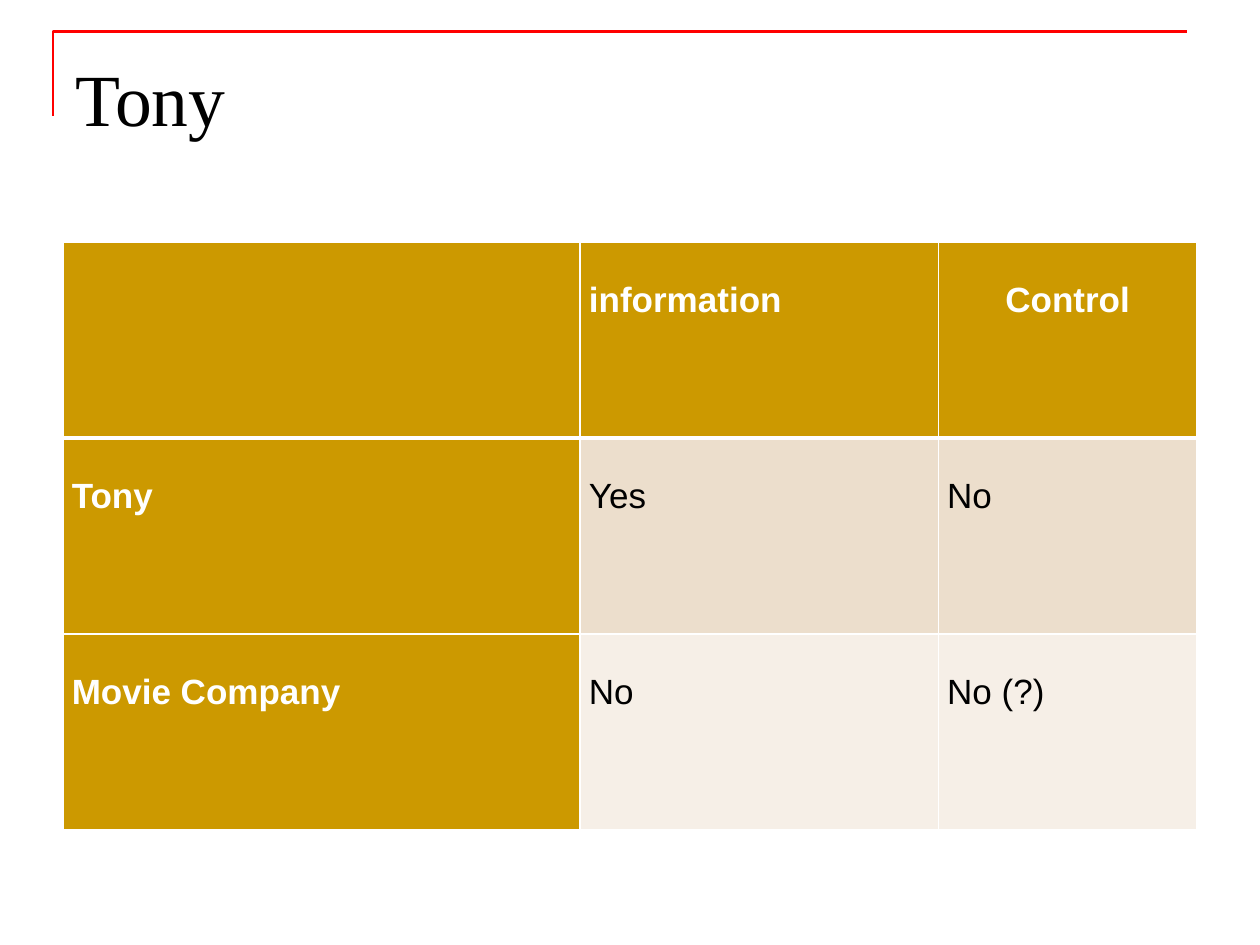
from lxml.etree import SubElement
from pptx import Presentation
from pptx.dml.color import RGBColor
from pptx.enum.text import MSO_ANCHOR, PP_ALIGN
from pptx.oxml.ns import qn
from pptx.util import Inches, Pt

WHITE = RGBColor(0xFF, 0xFF, 0xFF)
BLACK = RGBColor(0, 0, 0)
RED = RGBColor(0xFF, 0, 0)
GOLD = RGBColor(0xCC, 0x99, 0)
BANDS = [RGBColor(0xEC, 0xDE, 0xCC), RGBColor(0xF6, 0xEF, 0xE7)]

ROWS = [
    ["", "information", "Control"],
    ["Tony", "Yes", "No"],
    ["Movie Company", "No", "No (?)"],
]
COLUMN_WIDTHS = [4.1, 2.84, 2.05]


def add_span(para, text, font, size, color, bold=False):
    span = para.add_run()
    span.text = text
    span.font.name = font
    span.font.size = Pt(size)
    span.font.bold = bold
    span.font.color.rgb = color


def add_corner_rule(page, left, top, width, height):
    """Red line up the left side and along the top."""
    builder = page.shapes.build_freeform(
        Inches(left), Inches(top + height), scale=1.0)
    builder.add_line_segments(
        [(Inches(left), Inches(top)), (Inches(left + width), Inches(top))],
        close=False)
    rule = builder.convert_to_shape()
    rule.shadow.inherit = False
    rule.fill.background()
    rule.line.color.rgb = RED
    rule.line.width = Pt(1.5)


def add_title(page, text, left, top, width, height):
    box = page.shapes.add_textbox(
        Inches(left), Inches(top), Inches(width), Inches(height))
    frame = box.text_frame
    frame.word_wrap = True
    frame.margin_top = Inches(0.12)
    add_span(frame.paragraphs[0], text, "Times New Roman", 42, BLACK)


def set_borders(cell, bottom_width):
    """White borders; they must come before the fill in the cell properties."""
    props = cell._tc.get_or_add_tcPr()
    for side, points in [("L", 1), ("R", 1), ("T", 1), ("B", bottom_width)]:
        line = SubElement(props, qn(f"a:ln{side}"), w=str(Pt(points)))
        fill = SubElement(line, qn("a:solidFill"))
        SubElement(fill, qn("a:srgbClr"), val=str(WHITE))


def add_matrix(page, left, top, width, height):
    table = page.shapes.add_table(
        len(ROWS), len(COLUMN_WIDTHS), Inches(left), Inches(top),
        Inches(width), Inches(height)).table
    table.first_col = True
    for column, share in zip(table.columns, COLUMN_WIDTHS):
        column.width = Inches(width * share / sum(COLUMN_WIDTHS))

    for i, texts in enumerate(ROWS):
        for j, text in enumerate(texts):
            cell = table.cell(i, j)
            heading = i == 0 or j == 0
            if i < 2:
                set_borders(cell, 3 if i == 0 else 1)
            else:
                set_borders(cell, 1)
            cell.fill.solid()
            cell.fill.fore_color.rgb = GOLD if heading else BANDS[i - 1]
            cell.margin_left = cell.margin_right = Inches(0.07)
            cell.margin_top = cell.margin_bottom = 0
            cell.vertical_anchor = MSO_ANCHOR.TOP
            if not text:
                continue
            para = cell.text_frame.paragraphs[0]
            para.line_spacing = 2.0
            if text == "Control":
                para.alignment = PP_ALIGN.CENTER
            add_span(para, text, "Arial", 20,
                     WHITE if heading else BLACK, heading)


def main():
    deck = Presentation()
    deck.slide_width, deck.slide_height = Inches(10), Inches(7.5)
    page = deck.slides.add_slide(deck.slide_layouts[6])
    add_corner_rule(page, 0.42, 0.25, 9, 0.67)
    add_title(page, "Tony", 0.5, 0.3, 9, 1.25)
    add_matrix(page, 0.5, 1.92, 9, 4.67)
    deck.save("out.pptx")


if __name__ == "__main__":
    main()
